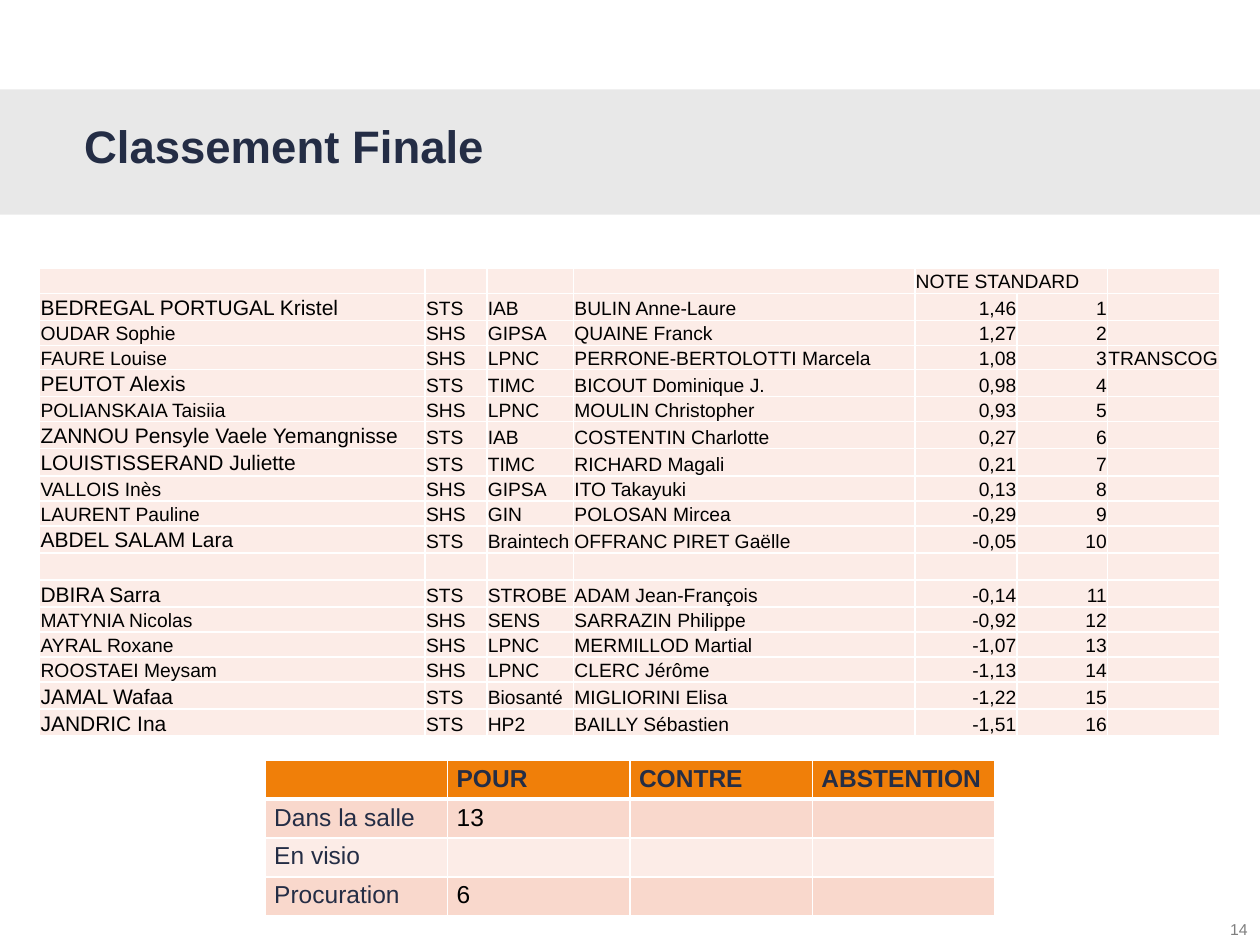
"""Builds the final ranking slide with its score table and vote table."""
from dataclasses import dataclass

from lxml import etree
from pptx import Presentation
from pptx.dml.color import RGBColor
from pptx.enum.shapes import MSO_SHAPE
from pptx.enum.text import MSO_ANCHOR, PP_ALIGN
from pptx.oxml.ns import qn
from pptx.util import Pt

RECT = MSO_SHAPE.RECTANGLE
TOP, BOTTOM = MSO_ANCHOR.TOP, MSO_ANCHOR.BOTTOM
LEFT, RIGHT = PP_ALIGN.LEFT, PP_ALIGN.RIGHT


@dataclass(frozen=True)
class Theme:
    font: str = "Arial"
    navy: str = "242D45"
    black: str = "000000"
    white: str = "FFFFFF"
    gray: str = "7F7F7F"
    band: str = "D9D9D9"
    orange: str = "F07F09"
    pale: str = "FCECE7"
    pink: str = "F9D8CC"
    title: float = 26
    vote: float = 14
    large: float = 12
    body: float = 11
    number: float = 9


T = Theme()


def write(tf, text, size, color, bold=False, align=LEFT):
    tf.text = text
    p = tf.paragraphs[0]
    p.alignment = align
    for r in p.runs:
        r.font.name, r.font.size, r.font.bold = T.font, Pt(size), bold
        r.font.color.rgb = RGBColor.from_string(color)
    if not text:
        etree.SubElement(p._p, qn("a:endParaRPr"), sz=str(int(size * 100)))


def style_cell(cell, fill, inset_x, inset_y, anchor, bottom_line=1):
    tcPr = cell._tc.get_or_add_tcPr()
    for side, width in (("L", 1), ("R", 1), ("T", 1), ("B", bottom_line)):
        ln = etree.SubElement(tcPr, qn(f"a:ln{side}"), w=str(Pt(width)))
        solid = etree.SubElement(ln, qn("a:solidFill"))
        etree.SubElement(solid, qn("a:srgbClr"), val=T.white)
    cell.fill.solid()
    cell.fill.fore_color.rgb = RGBColor.from_string(fill)
    cell.margin_left = cell.margin_right = Pt(inset_x)
    cell.margin_top = cell.margin_bottom = Pt(inset_y)
    cell.vertical_anchor = anchor


prs = Presentation()
prs.slide_width, prs.slide_height = Pt(720), Pt(540)
s = prs.slides.add_slide(prs.slide_layouts[6])

sp = s.shapes.add_shape(RECT, Pt(-0.7), Pt(51.1), Pt(720.7), Pt(71.6))
sp.shadow.inherit = False
sp.fill.solid()
sp.fill.fore_color.rgb = RGBColor.from_string(T.band)
sp.line.fill.background()
band_color = sp.fill._xPr.find(qn("a:solidFill"))[0]
etree.SubElement(band_color, qn("a:alpha"), val="59000")

tf = s.shapes.add_textbox(Pt(694), Pt(522), Pt(26), Pt(18)).text_frame
tf.word_wrap = False
write(tf, "14", T.number, T.gray, align=RIGHT)

tf = s.shapes.add_textbox(Pt(41), Pt(61.2), Pt(656.6), Pt(56)).text_frame
tf.word_wrap = True
tf.margin_top = Pt(6)
write(tf, "Classement Finale", T.title, T.navy, bold=True)

ranking = [
    ("BEDREGAL PORTUGAL Kristel", "STS", "IAB", "BULIN Anne-Laure", "1,46"),
    ("OUDAR Sophie", "SHS", "GIPSA", "QUAINE Franck", "1,27"),
    ("FAURE Louise", "SHS", "LPNC", "PERRONE-BERTOLOTTI Marcela", "1,08"),
    ("PEUTOT Alexis", "STS", "TIMC", "BICOUT Dominique J.", "0,98"),
    ("POLIANSKAIA Taisiia", "SHS", "LPNC", "MOULIN Christopher", "0,93"),
    ("ZANNOU Pensyle Vaele Yemangnisse", "STS", "IAB", "COSTENTIN Charlotte", "0,27"),
    ("LOUISTISSERAND Juliette", "STS", "TIMC", "RICHARD Magali", "0,21"),
    ("VALLOIS Inès", "SHS", "GIPSA", "ITO Takayuki", "0,13"),
    ("LAURENT Pauline", "SHS", "GIN", "POLOSAN Mircea", "-0,29"),
    ("ABDEL SALAM Lara", "STS", "Braintech", "OFFRANC PIRET Gaëlle", "-0,05"),
    ("DBIRA Sarra", "STS", "STROBE", "ADAM Jean-François", "-0,14"),
    ("MATYNIA Nicolas", "SHS", "SENS", "SARRAZIN Philippe", "-0,92"),
    ("AYRAL Roxane", "SHS", "LPNC", "MERMILLOD Martial", "-1,07"),
    ("ROOSTAEI Meysam", "SHS", "LPNC", "CLERC Jérôme", "-1,13"),
    ("JAMAL Wafaa", "STS", "Biosanté", "MIGLIORINI Elisa", "-1,22"),
    ("JANDRIC Ina", "STS", "HP2", "BAILLY Sébastien", "-1,51"),
]
admitted = 10
rows = [(*entry, str(rank), "TRANSCOG" if rank == 3 else "")
        for rank, entry in enumerate(ranking, 1)]
rows.insert(admitted, ("",) * 7)
rows.insert(0, ("", "", "", "", "NOTE STANDARD", "", ""))
col_widths = [220.3, 35.3, 49.5, 195, 58.5, 51.7, 64]

table = s.shapes.add_table(len(rows), len(col_widths), Pt(22.7), Pt(153.3),
                           Pt(sum(col_widths)), Pt(266.5)).table
table.first_row = table.horz_banding = False
for column, width in zip(table.columns, col_widths):
    column.width = Pt(width)
for i, row in enumerate(rows):
    tall = row[1] == "STS" or i == admitted + 1
    table.rows[i].height = Pt(12.8 if row[6] else 15.5 if tall else 14.3)
    for j, text in enumerate(row):
        cell = table.cell(i, j)
        style_cell(cell, T.pale, 0.5, 0.3, BOTTOM)
        size = T.large if j == 0 and row[1] == "STS" else T.body
        align = RIGHT if i and j in (4, 5) else LEFT
        write(cell.text_frame, text, size, T.black, align=align)
table.cell(0, 4).merge(table.cell(0, 5))

votes = [
    ("", "POUR", "CONTRE", "ABSTENTION"),
    ("Dans la salle", "13", "", ""),
    ("En visio", "", "", ""),
    ("Procuration", "6", "", ""),
]
vote_fills = [T.orange, T.pink, T.pale, T.pink]
vote_width, vote_height = 104.25, 21.8
table = s.shapes.add_table(4, 4, Pt(151.5), Pt(434.4),
                           Pt(4 * vote_width), Pt(4 * vote_height)).table
table.first_row = table.horz_banding = False
for column in table.columns:
    column.width = Pt(vote_width)
for i, row in enumerate(votes):
    table.rows[i].height = Pt(vote_height)
    for j, text in enumerate(row):
        cell = table.cell(i, j)
        style_cell(cell, vote_fills[i], 5.2, 2.7, TOP, 1 if i else 3)
        color = T.black if i and j else T.navy
        write(cell.text_frame, text, T.vote, color, bold=i == 0)

prs.save("out.pptx")
